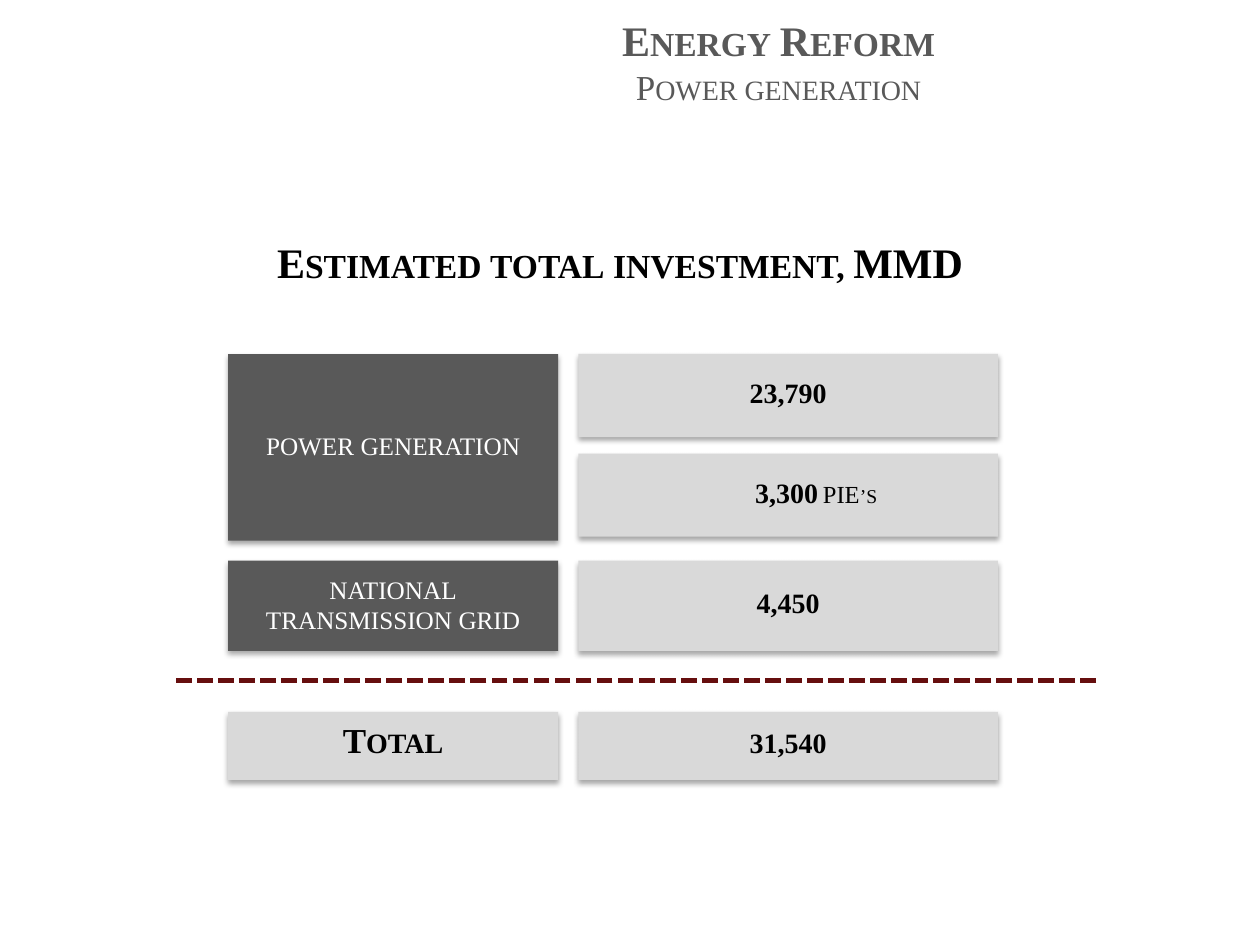
import dataclasses

import pptx
import pptx.dml.color
import pptx.enum.dml
import pptx.enum.shapes
import pptx.enum.text
import pptx.oxml
import pptx.oxml.ns
import pptx.util

Pt = pptx.util.Pt
RGB = pptx.dml.color.RGBColor.from_string
CENTER = pptx.enum.text.PP_ALIGN.CENTER


@dataclasses.dataclass(frozen=True)
class Theme:
    font: str = "Times New Roman"
    white: str = "FFFFFF"
    black: str = "000000"
    dark: str = "595959"
    light: str = "D9D9D9"
    rule: str = "660E0E"
    title: int = 24
    figure: int = 20
    label: int = 18
    note: int = 14


THEME = Theme()
SHADOW = (
    f'<a:outerShdw {pptx.oxml.ns.nsdecls("a")} blurRad="40000" dist="23000" dir="5400000"'
    ' rotWithShape="0"><a:srgbClr val="000000"><a:alpha val="35000"/></a:srgbClr></a:outerShdw>'
)


def add_small_caps(paragraph, text, size, color, bold):
    run = paragraph.add_run()
    run.text = text
    for name, value in {"name": THEME.font, "size": Pt(size), "bold": bold}.items():
        setattr(run.font, name, value)
    run.font.color.rgb = RGB(color)
    run.font._element.set("cap", "small")


def add_text_box(left, top, width, height):
    """Add a wrapping box that grows with its text and return its text frame."""
    frame = slide.shapes.add_textbox(Pt(left), Pt(top), Pt(width), Pt(height)).text_frame
    frame.word_wrap = True
    frame.auto_size = pptx.enum.text.MSO_AUTO_SIZE.SHAPE_TO_FIT_TEXT
    return frame


deck = pptx.Presentation()
deck.slide_width, deck.slide_height = Pt(720), Pt(540)
slide = deck.slides.add_slide(deck.slide_layouts[6])

# Investment grid: name column on the left, amount column on the right
name_left, name_width = 130.3, 188.6
amount_left, amount_width = 330.5, 239.8
generation_top, private_top, grid_top, total_top = 202.3, 259.2, 320.4, 406.8
amount_height, grid_height, total_height = 47.5, 51.5, 38.9

name_style = (THEME.label, THEME.white, False)
amount_style = (THEME.figure, THEME.black, True)
note_style = (THEME.note, THEME.black, False)

names = [
    (generation_top, 106.6, THEME.dark, [("power generation", name_style)]),
    (grid_top, grid_height, THEME.dark, [("national transmission grid", name_style)]),
    (total_top, total_height, THEME.light, [("Total", amount_style)]),
]
amounts = [
    (generation_top, amount_height, THEME.light, [("23,790", amount_style)]),
    (private_top, amount_height, THEME.light, [("3,300", amount_style), (" PIE’s", note_style)]),
    (grid_top, grid_height, THEME.light, [("4,450", amount_style)]),
    (total_top, total_height, THEME.light, [("31,540", amount_style)]),
]

for left, width, cells in [(name_left, name_width, names), (amount_left, amount_width, amounts)]:
    for top, height, fill, parts in cells:
        cell = slide.shapes.add_shape(
            pptx.enum.shapes.MSO_SHAPE.RECTANGLE, Pt(left), Pt(top), Pt(width), Pt(height)
        )
        cell.fill.solid()
        cell.fill.fore_color.rgb = RGB(fill)
        cell.line.fill.background()
        cell.shadow.inherit = False
        effects = cell._element.spPr.find(pptx.oxml.ns.qn("a:effectLst"))
        effects.append(pptx.oxml.parse_xml(SHADOW))
        cell.text_frame.word_wrap = True
        cell.text_frame.vertical_anchor = pptx.enum.text.MSO_ANCHOR.MIDDLE
        paragraph = cell.text_frame.paragraphs[0]
        paragraph.alignment = CENTER
        paragraph.line_spacing = Pt(17)
        if len(parts) > 1:
            # The indent keeps the figure under the one above despite the note after it
            paragraph._p.get_or_add_pPr().set("marL", str(Pt(32)))
        for text, style in parts:
            add_small_caps(paragraph, text, *style)

# Rule above the total
total_rule = slide.shapes.add_connector(
    pptx.enum.shapes.MSO_CONNECTOR.STRAIGHT, Pt(626.4), Pt(388.8), Pt(100.1), Pt(388.8)
)
total_rule.line.color.rgb = RGB(THEME.rule)
total_rule.line.width = Pt(3)
total_rule.line.dash_style = pptx.enum.dml.MSO_LINE.SQUARE_DOT
total_rule._element.spPr.append(pptx.oxml.parse_xml(f'<a:effectLst {pptx.oxml.ns.nsdecls("a")}/>'))

# Headings
investment = add_text_box(31, 132.5, 646.6, 35.3).paragraphs[0]
investment.alignment = CENTER
investment.line_spacing = Pt(28)
add_small_caps(investment, "Estimated total investment, MMD", THEME.title, THEME.black, True)

header = add_text_box(184.3, 5, 521.3, 60.5)
topic, subtopic = header.paragraphs[0], header.add_paragraph()
for paragraph, text, size, bold in [
    (topic, "Energy Reform", THEME.title, True),
    (subtopic, "Power generation", THEME.figure, False),
]:
    paragraph.alignment = CENTER
    add_small_caps(paragraph, text, size, THEME.dark, bold)

deck.save("out.pptx")
